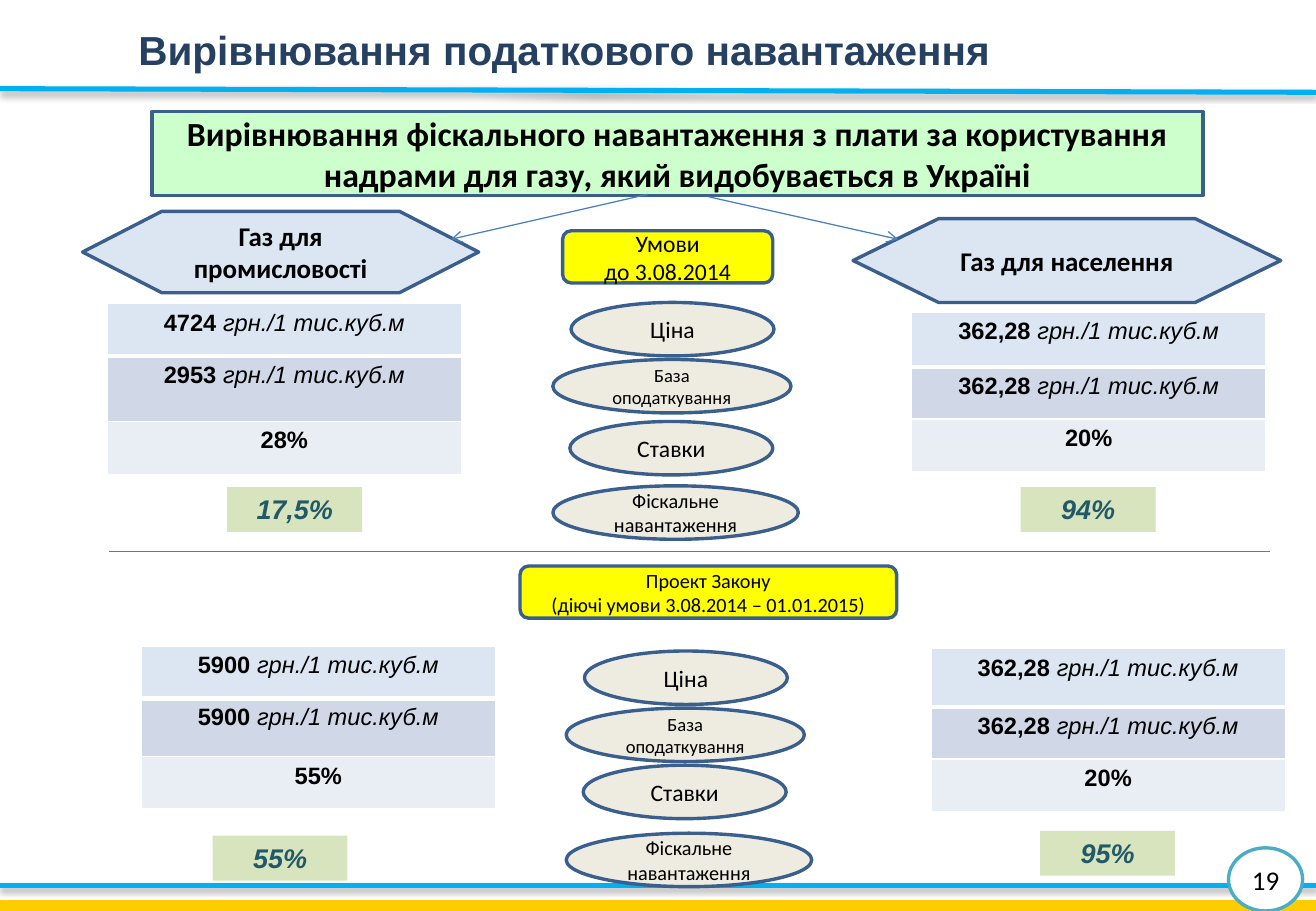
import pptx
import pptx.util
import pptx.dml.color
import pptx.enum.shapes
import pptx.enum.text
import pptx.oxml
import pptx.oxml.ns

Inches, Pt = pptx.util.Inches, pptx.util.Pt
RGB = pptx.dml.color.RGBColor.from_string
SHAPE = pptx.enum.shapes.MSO_SHAPE
ANCHOR = pptx.enum.text.MSO_ANCHOR
CENTER = pptx.enum.text.PP_ALIGN.CENTER
NS = pptx.oxml.ns.nsdecls("a")

COLORS = {
    "title": "254061", "rule": "00B0F0", "footer": "FFCC00", "outline": "3A5F8C",
    "number": "4BACC6", "heading": "CCFFCC", "market": "DCE6F2", "period": "FFFF00",
    "label": "EEECE1", "burden": "D7E4BD", "burden text": "215968", "thin": "4B7EBC",
    "price": "DCE6F2", "base": "D0D8E8", "rate": "E9EDF4",
    "white": "FFFFFF", "black": "000000",
}

deck = pptx.Presentation()
deck.slide_width, deck.slide_height = Inches(10.83), Inches(7.5)
slide = deck.slides.add_slide(deck.slide_layouts[6])


def add_box(kind, at, fill, text="", size=14, outline="outline", bold=False):
    box = slide.shapes.add_shape(kind, *map(Inches, at))
    box.shadow.inherit = False
    box.fill.solid()
    box.fill.fore_color.rgb = RGB(COLORS[fill])
    if outline:
        box.line.color.rgb = RGB(COLORS[outline])
        box.line.width = Pt(2)
    else:
        box.line.fill.background()
    frame = box.text_frame
    frame.word_wrap = True
    frame.vertical_anchor = ANCHOR.MIDDLE
    frame.text = text
    for paragraph in frame.paragraphs:
        paragraph.alignment = CENTER
        font = paragraph.font
        font.name, font.size, font.bold = "Calibri", Pt(size), bold
        font.color.rgb = RGB(COLORS["black"])
    return box


def add_line(start, end, color, width, effect="", arrow=False):
    """Draw a straight line; effect is the XML inside its effect list."""
    line = slide.shapes.add_connector(
        pptx.enum.shapes.MSO_CONNECTOR.STRAIGHT, *map(Inches, start + end))
    line.line.color.rgb = RGB(COLORS[color])
    line.line.width = Pt(width)
    if arrow:
        line.line._get_or_add_ln().append(
            pptx.oxml.parse_xml(f'<a:tailEnd {NS} type="arrow"/>'))
    line._element.spPr.append(
        pptx.oxml.parse_xml(f"<a:effectLst {NS}>{effect}</a:effectLst>"))


# Title and frame of the page
title = slide.shapes.add_textbox(Inches(1.04), Inches(0.16), Inches(9.73), Inches(0.6))
title.text_frame.word_wrap = True
headline = title.text_frame.paragraphs[0]
headline.text = "Вирівнювання податкового навантаження"
headline.font.name, headline.font.size, headline.font.bold = "Arial", Pt(24), True
headline.font.color.rgb = RGB(COLORS["title"])

rule_shadow = (
    f'<a:outerShdw blurRad="{Pt(3.1)}" dist="{Pt(1.8)}" dir="5400000" rotWithShape="0">'
    f'<a:srgbClr val="{COLORS["black"]}"><a:alpha val="35000"/></a:srgbClr></a:outerShdw>')
add_line((0, 0.73), (10.83, 0.76), "rule", 3, rule_shadow)
add_line((0, 7.29), (10.83, 7.29), "rule", 3, rule_shadow)
add_box(SHAPE.RECTANGLE, (0, 7.41, 10.83, 0.12), "footer", outline=None)
page_number = add_box(SHAPE.OVAL, (10.11, 6.98, 0.61, 0.52), "white", "19", 16, "number")
page_number.text_frame.margin_left = page_number.text_frame.margin_right = 0

# Heading and the two markets
add_box(SHAPE.RECTANGLE, (1.25, 0.92, 8.65, 0.69), "heading",
        "Вирівнювання фіскального навантаження з плати за користування "
        "надрами для газу, який видобувається в Україні", 20, bold=True)
add_box(SHAPE.FLOWCHART_PREPARATION, (0.68, 1.74, 3.26, 0.67), "market",
        "Газ для промисловості", 16, bold=True)
add_box(SHAPE.FLOWCHART_PREPARATION, (7.02, 1.8, 3.52, 0.69), "market",
        "Газ для населення", 16, bold=True)
add_line((5.83, 1.62), (7.39, 1.97), "thin", 0.75, arrow=True)
add_line((5.33, 1.6), (3.71, 1.97), "thin", 0.75, arrow=True)
add_line((0.9, 4.54), (10.45, 4.54), "thin", 0.75)

# Periods with their row labels
add_box(SHAPE.ROUNDED_RECTANGLE, (4.63, 1.9, 1.73, 0.43), "period",
        "Умови\nдо 3.08.2014", 14)
add_box(SHAPE.ROUNDED_RECTANGLE, (4.28, 4.66, 3.1, 0.43), "period",
        "Проект Закону\n(діючі умови 3.08.2014 – 01.01.2015)", 12)

row_labels = [  # text, size, left offset, width
    ("Ціна", 14, 0.15, 1.67),
    ("База оподаткування", 11, 0, 1.96),
    ("Ставки", 14, 0.14, 1.67),
    ("Фіскальне навантаження", 12, 0, 2.02),
]
for left, tops in ((4.55, (2.49, 2.96, 3.47, 4.0)), (4.66, (5.36, 5.83, 6.3, 6.86))):
    for (text, size, offset, width), top in zip(row_labels, tops):
        add_box(SHAPE.OVAL, (left + offset, top, width, 0.44), "label", text, size)

# Fiscal burden
for left, top, share in ((1.87, 4.01, "17,5%"), (8.4, 4.01, "94%"),
                         (1.75, 6.88, "55%"), (8.56, 6.84, "95%")):
    burden = add_box(SHAPE.RECTANGLE, (left, top, 1.11, 0.37), "burden", share, 16,
                     None, True)
    burden.text_frame.vertical_anchor = ANCHOR.TOP
    burden.text_frame.auto_size = pptx.enum.text.MSO_AUTO_SIZE.SHAPE_TO_FIT_TEXT
    burden_font = burden.text_frame.paragraphs[0].font
    burden_font.name, burden_font.italic = "Arial", True
    burden_font.color.rgb = RGB(COLORS["burden text"])

# Price, tax base and rate for each market and period
UNIT = "грн./1 тис.куб.м"
tables = [  # left, top, row heights, price, base, rate
    (0.88, 2.5, (0.43, 0.54, 0.44), "4724", "2953", "28%"),
    (1.16, 5.32, (0.43, 0.48, 0.43), "5900", "5900", "55%"),
    (7.5, 2.57, (0.45, 0.43, 0.43), "362,28", "362,28", "20%"),
    (7.66, 5.34, (0.48, 0.43, 0.43), "362,28", "362,28", "20%"),
]
for left, top, heights, *values in tables:
    table = slide.shapes.add_table(3, 1, Inches(left), Inches(top), Inches(2.92),
                                   Inches(sum(heights))).table
    table.first_row = table.horz_banding = False
    for row, (height, value, fill) in enumerate(
            zip(heights, values, ("price", "base", "rate"))):
        table.rows[row].height = Inches(height)
        cell = table.cell(row, 0)
        cell.margin_left = cell.margin_right = Inches(0.11)
        borders = {"L": 1, "R": 1, "T": 3 if row == 1 else 1, "B": 3 if row == 0 else 1}
        for side, width in borders.items():
            cell._tc.get_or_add_tcPr().append(pptx.oxml.parse_xml(
                f'<a:ln{side} {NS} w="{Pt(width)}"><a:solidFill>'
                f'<a:srgbClr val="{COLORS["white"]}"/></a:solidFill></a:ln{side}>'))
        cell.fill.solid()
        cell.fill.fore_color.rgb = RGB(COLORS[fill])
        paragraph = cell.text_frame.paragraphs[0]
        paragraph.alignment = CENTER
        paragraph.font.name, paragraph.font.size = "Arial", Pt(14)
        paragraph.font.color.rgb = RGB(COLORS["black"])
        figure = paragraph.add_run()
        figure.text = value
        figure.font.bold = True
        if fill != "rate":
            figure.text = value + " "
            unit = paragraph.add_run()
            unit.text = UNIT
            unit.font.italic = True

deck.save("out.pptx")
